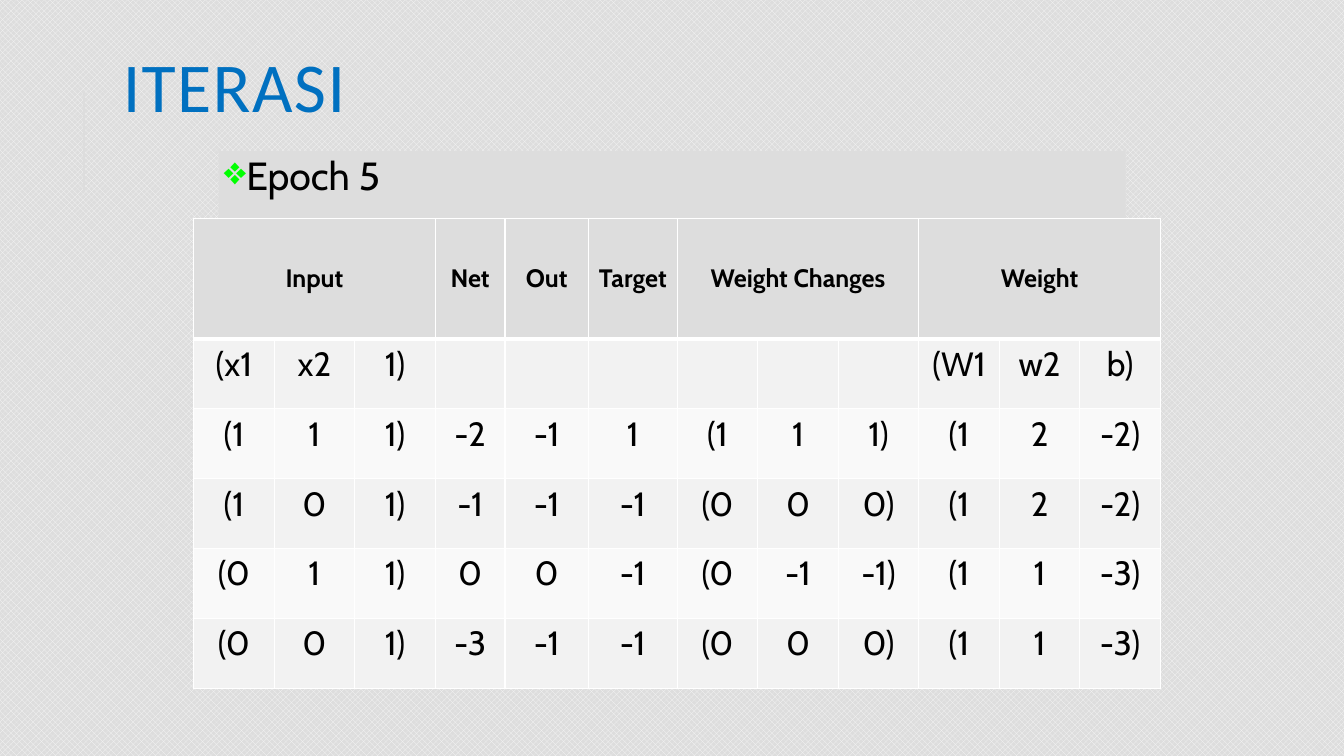
from dataclasses import dataclass

from lxml import etree
from pptx import Presentation
from pptx.dml.color import RGBColor
from pptx.enum.dml import MSO_PATTERN
from pptx.enum.shapes import MSO_CONNECTOR, MSO_SHAPE
from pptx.enum.text import MSO_ANCHOR, PP_ALIGN
from pptx.oxml import parse_xml
from pptx.oxml.ns import nsdecls, qn
from pptx.slide import Slide
from pptx.table import _Cell
from pptx.util import Cm, Pt

DIAMOND = MSO_PATTERN.SOLID_DIAMOND
STRAIGHT = MSO_CONNECTOR.STRAIGHT
RECT = MSO_SHAPE.RECTANGLE
TOP, MIDDLE = MSO_ANCHOR.TOP, MSO_ANCHOR.MIDDLE
LEFT, CENTER = PP_ALIGN.LEFT, PP_ALIGN.CENTER

HUES = {
    "black": "000000",
    "blue": "0070C0",
    "gray": "DDDDDD",
    "green": "00FF00",
    "light": "F8F8F8",
    "odd": "F2F2F2",
    "even": "F9F9F9",
    "white": "FFFFFF",
}


@dataclass
class Style:
    size: int
    face: str = "Cabin"
    hue: str = "black"
    bold: bool = False


@dataclass
class Head:
    text: str
    col: int
    span: int = 1


TITLE = Style(50, "Calibri", "blue")
EPOCH = Style(28)
HEADER = Style(18, bold=True)
BODY = Style(24)

HEADS = [
    Head("Input", 0, 3),
    Head("Net", 3),
    Head("Out", 4),
    Head("Target", 5),
    Head("Weight Changes", 6, 3),
    Head("Weight", 9, 3),
]
ROWS = [
    ["(x1", "x2", "1)", "", "", "", "", "", "", "(W1", "w2", "b)"],
    ["(1", "1", "1)", "-2", "-1", "1", "(1", "1", "1)", "(1", "2", "-2)"],
    ["(1", "0", "1)", "-1", "-1", "-1", "(0", "0", "0)", "(1", "2", "-2)"],
    ["(0", "1", "1)", "0", "0", "-1", "(0", "-1", "-1)", "(1", "1", "-3)"],
    ["(0", "0", "1)", "-3", "-1", "-1", "(0", "0", "0)", "(1", "1", "-3)"],
]
WIDTHS = [2.03] * 3 + [1.76, 2.1, 2.24] + [2.03] * 6
HEIGHTS = [3.03] + [1.76] * len(ROWS)


def color(hue: str) -> RGBColor:
    return RGBColor.from_string(HUES[hue])


def write(para, text: str, style: Style, align: PP_ALIGN) -> None:
    para.text = text
    para.alignment = align
    font = para.font
    font.name, font.size, font.bold = style.face, Pt(style.size), style.bold
    font.color.rgb = color(style.hue)


def border(cell: _Cell, row: int) -> None:
    props = cell._tc.get_or_add_tcPr()
    thick = {"B": row == 0, "T": row == 1}
    for side in "LRTB":
        width = Pt(3 if thick.get(side) else 1)
        props.append(parse_xml(
            f'<a:ln{side} {nsdecls("a")} w="{width}"><a:solidFill>'
            f'<a:srgbClr val="{HUES["white"]}"/></a:solidFill></a:ln{side}>'))


def add_rule(slide: Slide) -> None:
    rule = slide.shapes.add_connector(
        STRAIGHT, Cm(2.12), Cm(4.83), Cm(2.12), Cm(2.29))
    rule.line.color.rgb = color("gray")
    rule.line.width = Pt(1.5)
    etree.SubElement(rule._element.spPr, qn("a:effectLst"))


def add_title(slide: Slide) -> None:
    title = slide.shapes.title
    title.left, title.top = Cm(2.84), Cm(0.25)
    title.width, title.height = Cm(27), Cm(4.17)
    frame = title.text_frame
    frame.vertical_anchor = MIDDLE
    para = frame.paragraphs[0]
    write(para, "ITERASI", TITLE, LEFT)
    para.line_spacing = 0.8
    para.font._element.set("spc", "100")


def add_epoch(slide: Slide) -> None:
    panel = slide.shapes.add_shape(
        RECT, Cm(5.51), Cm(3.81), Cm(22.86), Cm(13.2))
    panel.shadow.inherit = False
    panel.fill.solid()
    panel.fill.fore_color.rgb = color("gray")
    panel.line.fill.background()
    frame = panel.text_frame
    frame.vertical_anchor = TOP
    frame.margin_left = frame.margin_right = Cm(0.13)
    frame.margin_top = frame.margin_bottom = Cm(0.13)
    para = frame.paragraphs[0]
    props = para._p.get_or_add_pPr()
    props.set("marL", str(Cm(0.25)))
    props.set("indent", str(Cm(-0.25)))
    mark = etree.SubElement(props, qn("a:buClr"))
    etree.SubElement(mark, qn("a:srgbClr"), val=HUES["green"])
    etree.SubElement(props, qn("a:buChar"), char="❖")
    write(para, "Epoch 5", EPOCH, LEFT)
    para.line_spacing = 0.9


def add_grid(slide: Slide) -> None:
    grid = slide.shapes.add_table(
        len(HEIGHTS), len(WIDTHS), Cm(4.88), Cm(5.51),
        Cm(sum(WIDTHS)), Cm(sum(HEIGHTS))).table
    for col, width in zip(grid.columns, WIDTHS):
        col.width = Cm(width)
    for row, height in zip(grid.rows, HEIGHTS):
        row.height = Cm(height)
    for r, row in enumerate(grid.rows):
        hue = "gray" if r == 0 else "odd" if r % 2 else "even"
        for cell in row.cells:
            border(cell, r)
            cell.fill.solid()
            cell.fill.fore_color.rgb = color(hue)
    for head in HEADS:
        cell = grid.cell(0, head.col)
        if head.span > 1:
            cell.merge(grid.cell(0, head.col + head.span - 1))
        cell.vertical_anchor = MIDDLE
        write(cell.text_frame.paragraphs[0], head.text, HEADER, CENTER)
    for r, row in enumerate(ROWS, 1):
        for c, text in enumerate(row):
            para = grid.cell(r, c).text_frame.paragraphs[0]
            write(para, text, BODY, CENTER)


def main() -> None:
    deck = Presentation()
    deck.slide_width, deck.slide_height = Cm(33.87), Cm(19.05)
    slide = deck.slides.add_slide(deck.slide_layouts[5])
    back = slide.background.fill
    back.patterned()
    back.pattern = DIAMOND
    back.fore_color.rgb = color("light")
    back.back_color.rgb = color("gray")
    add_rule(slide)
    add_title(slide)
    add_epoch(slide)
    add_grid(slide)
    deck.save("out.pptx")


if __name__ == "__main__":
    main()
